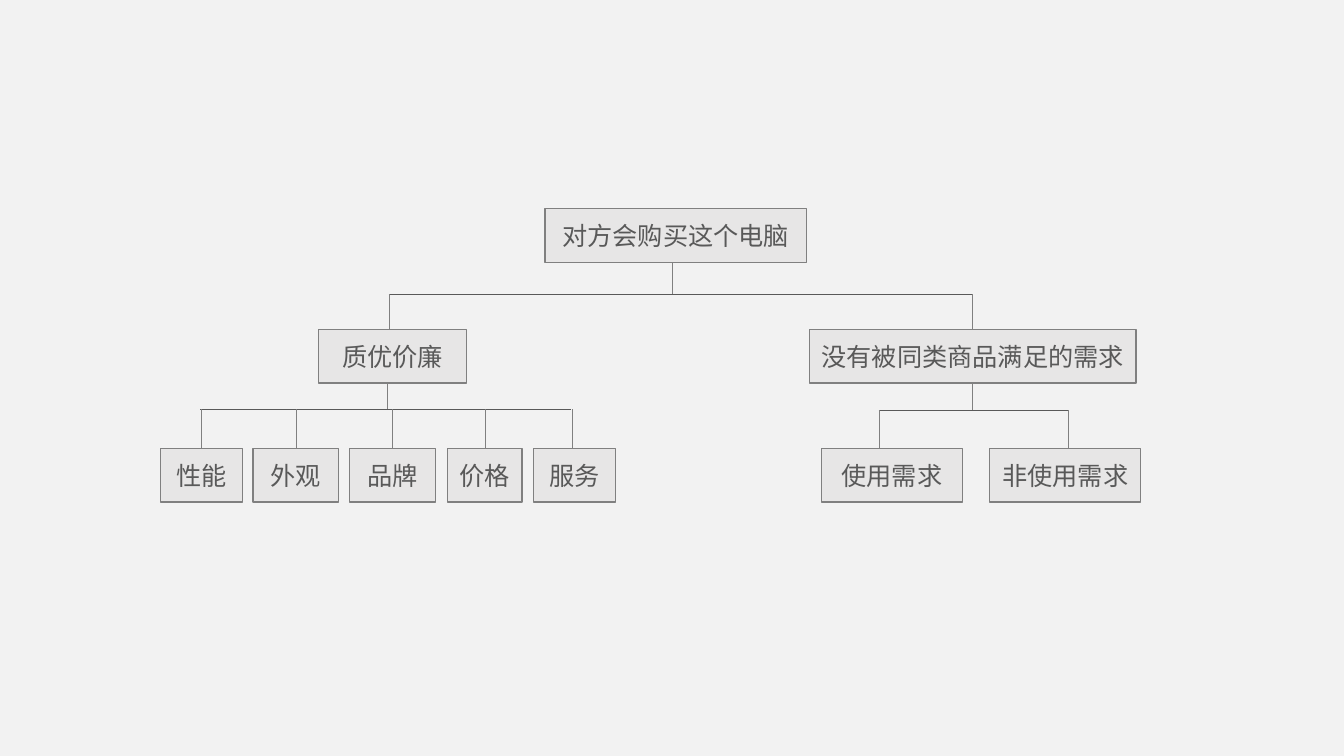
import pptx
import pptx.dml.color
import pptx.enum.shapes
import pptx.enum.text
import pptx.oxml.ns
import pptx.util
from lxml import etree

Cm = pptx.util.Cm
Pt = pptx.util.Pt
COLORS = {"page": "F2F2F2", "box": "E7E6E6", "edge": "808080", "text": "595959"}
TEXT_FORMAT = {"name": "Noto Sans CJK SC", "size": Pt(18)}
FRAME_FORMAT = {
    "word_wrap": False,
    "vertical_anchor": pptx.enum.text.MSO_ANCHOR.MIDDLE,
}
BOX_HEIGHT = 1.35
BOTTOM, TOP = 2, 0


def rgb(name):
    return pptx.dml.color.RGBColor.from_string(COLORS[name])


def apply(target, formats):
    for key, value in formats.items():
        setattr(target, key, value)


class TreePage:
    """Style and current slide of a logic tree."""

    def __init__(self, page):
        self.page = page
        fill = page.background.fill
        fill.solid()
        fill.fore_color.rgb = rgb("page")

    def box(self, text, left, top, width):
        box = self.page.shapes.add_shape(
            pptx.enum.shapes.MSO_SHAPE.RECTANGLE,
            Cm(left), Cm(top), Cm(width), Cm(BOX_HEIGHT))
        box.shadow.inherit = False
        box.fill.solid()
        box.fill.fore_color.rgb = rgb("box")
        box.line.color.rgb = rgb("edge")
        box.line.width = Pt(1)
        apply(box.text_frame, FRAME_FORMAT)
        para = box.text_frame.paragraphs[0]
        para.alignment = pptx.enum.text.PP_ALIGN.CENTER
        span = para.add_run()
        span.text = text
        apply(span.font, TEXT_FORMAT)
        span.font.color.rgb = rgb("text")
        fonts = span.font._element
        east_asian = etree.SubElement(fonts, pptx.oxml.ns.qn("a:ea"))
        east_asian.set("typeface", TEXT_FORMAT["name"])
        return box

    def line(self, start, end, color="edge"):
        line = self.page.shapes.add_connector(
            pptx.enum.shapes.MSO_CONNECTOR.STRAIGHT, *map(Cm, start + end))
        line.line.color.rgb = rgb(color)
        line.line.width = Pt(0.5)
        etree.SubElement(line._element.spPr, pptx.oxml.ns.qn("a:effectLst"))
        return line

    def link(self, box, side, bar_top, x=None):
        """Join a box to its bar: at the middle of the side, or at x."""
        middle = (box.left + box.width // 2) / Cm(1)
        edge = (box.top + (box.height if side == BOTTOM else 0)) / Cm(1)
        at = middle if x is None else x
        line = self.line((at, edge), (at, bar_top))
        if x is None:
            line.begin_connect(box, side)

    def branch(self, parent, stem_x, bar, top, children):
        """Hang child boxes (text, left, width, drop x) from a bar."""
        bar_left, bar_right, bar_top = bar
        self.line((bar_left, bar_top), (bar_right, bar_top), "text")
        self.link(parent, BOTTOM, bar_top, stem_x)
        boxes = []
        for text, left, width, drop_x in children:
            box = self.box(text, left, top, width)
            self.link(box, TOP, bar_top, drop_x)
            boxes.append(box)
        return boxes


def main():
    deck = pptx.Presentation()
    deck.slide_width, deck.slide_height = Cm(33.87), Cm(19.05)
    tree = TreePage(deck.slides.add_slide(deck.slide_layouts[6]))

    # Conclusion and its two reasons
    root = tree.box("对方会购买这个电脑", 13.74, 5.26, 6.58)
    value, need = tree.branch(root, 16.94, (9.8, 24.51, 7.42), 8.3, [
        ("质优价廉", 8.03, 3.73, 9.8),
        ("没有被同类商品满足的需求", 20.4, 8.23, None),
    ])

    # Value for money
    tree.branch(value, 9.75, (5.05, 14.4, 10.31), 11.3, [
        ("性能", 4.04, 2.08, None),
        ("外观", 6.38, 2.16, None),
        ("品牌", 8.81, 2.16, None),
        ("价格", 11.28, 1.88, None),
        ("服务", 13.44, 2.08, 14.43),
    ])

    # Unmet needs
    tree.branch(need, None, (22.15, 26.92, 10.34), 11.3, [
        ("使用需求", 20.7, 3.56, 22.15),
        ("非使用需求", 24.94, 3.81, 26.92),
    ])
    deck.save("out.pptx")


if __name__ == "__main__":
    main()
